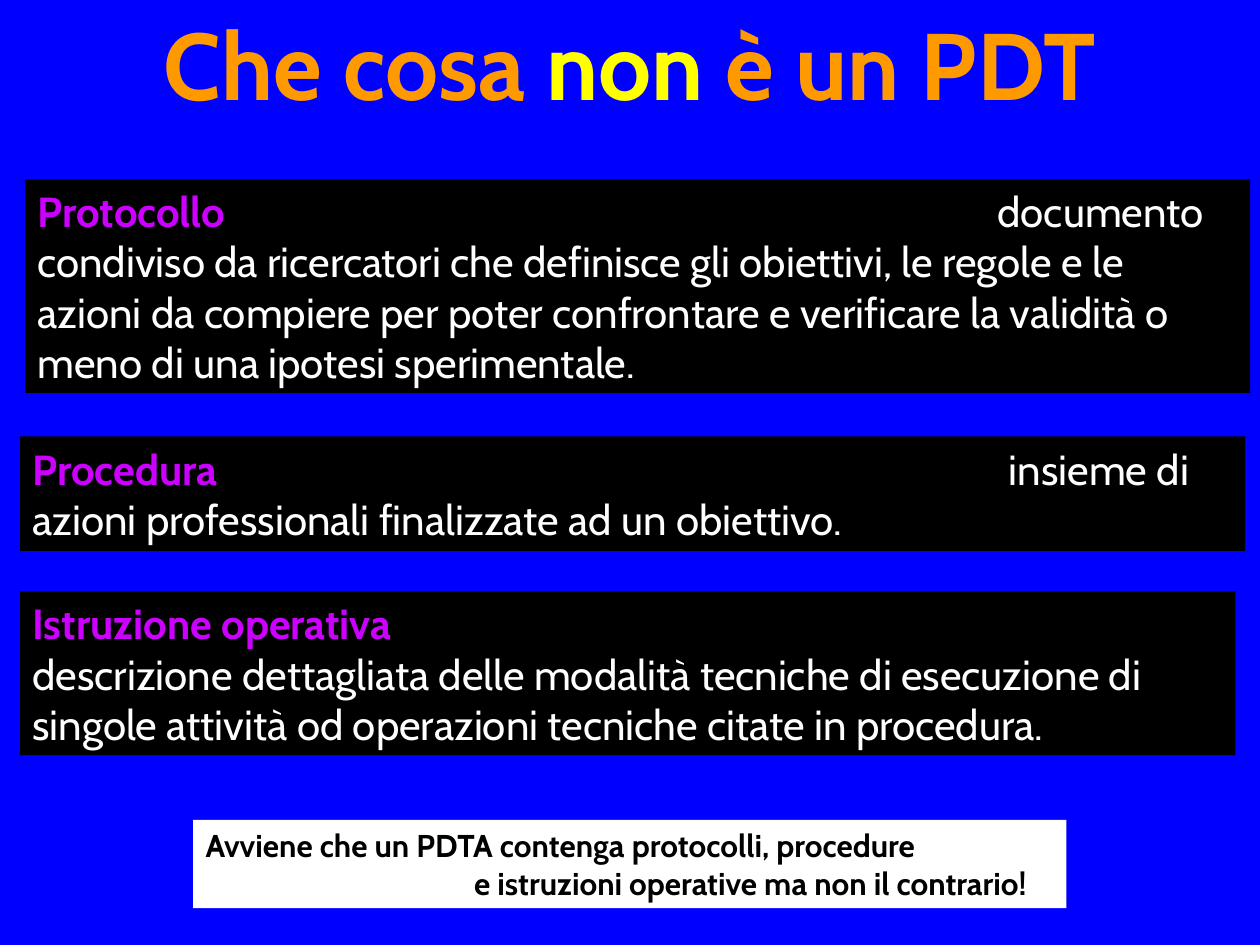
from dataclasses import dataclass
from typing import Optional

from lxml import etree
from pptx import Presentation
from pptx.dml.color import RGBColor
from pptx.enum.shapes import MSO_SHAPE
from pptx.enum.text import MSO_ANCHOR, MSO_AUTO_SIZE, PP_ALIGN
from pptx.oxml.ns import qn
from pptx.util import Pt

RECTANGLE = MSO_SHAPE.RECTANGLE
TOP, MIDDLE = MSO_ANCHOR.TOP, MSO_ANCHOR.MIDDLE
LEFT, CENTER = PP_ALIGN.LEFT, PP_ALIGN.CENTER
NO_AUTOFIT = MSO_AUTO_SIZE.NONE
FONT = "Cabin"
BLUE, BLACK, WHITE = "0000FF", "000000", "FFFFFF"
ORANGE, YELLOW, PURPLE = "FF9900", "FFFF00", "CC00FF"


@dataclass
class Definition:
    term: str
    meaning: str
    left: float
    top: float
    width: float
    height: float
    tab: Optional[float] = None


DEFINITIONS = [
    Definition(
        "Protocollo",
        "\tdocumento condiviso da ricercatori che definisce gli obiettivi, "
        "le regole e le azioni da compiere per poter confrontare e verificare "
        "la validità o meno di una ipotesi sperimentale.",
        14.4, 102.5, 700, 122, 548.6),
    Definition(
        "Procedura",
        "\tinsieme di azioni professionali finalizzate ad un obiettivo.",
        11.5, 249.3, 700, 65.5, 558),
    Definition(
        "Istruzione operativa",
        "\ndescrizione dettagliata delle modalità tecniche di esecuzione di "
        "singole attività od operazioni tecniche citate in procedura.",
        11.5, 338, 694.5, 93.5),
]


def color(value: str) -> RGBColor:
    return RGBColor.from_string(value)


def write(paragraph, text: str, *, size: float, ink: str, bold: bool = True) -> None:
    for number, line in enumerate(text.split("\n")):
        if number:
            paragraph.add_line_break()
        if line:
            run = paragraph.add_run()
            run.text = line
            run.font.name = FONT
            run.font.size = Pt(size)
            run.font.bold = bold
            run.font.color.rgb = color(ink)


def set_tab(paragraph, position: float) -> None:
    properties = paragraph._p.get_or_add_pPr()
    stops = etree.SubElement(properties, qn("a:tabLst"))
    etree.SubElement(stops, qn("a:tab"), pos=str(int(Pt(position))), algn="l")


def add_panel(slide, left: float, top: float, width: float, height: float,
              *, fill: str, anchor, tab: Optional[float] = None):
    panel = slide.shapes.add_shape(
        RECTANGLE, Pt(left), Pt(top), Pt(width), Pt(height))
    panel.shadow.inherit = False
    panel.fill.solid()
    panel.fill.fore_color.rgb = color(fill)
    panel.line.fill.background()
    panel.text_frame.word_wrap = True
    panel.text_frame.vertical_anchor = anchor
    paragraph = panel.text_frame.paragraphs[0]
    paragraph.alignment = LEFT
    if tab is not None:
        set_tab(paragraph, tab)
    return paragraph


def add_definition(slide, item: Definition) -> None:
    paragraph = add_panel(slide, item.left, item.top, item.width, item.height,
                          fill=BLACK, anchor=MIDDLE, tab=item.tab)
    write(paragraph, item.term, size=24, ink=PURPLE)
    write(paragraph, item.meaning, size=24, ink=WHITE, bold=False)


def add_title(slide) -> None:
    title = slide.shapes.title
    title.left, title.top, title.width, title.height = Pt(0), Pt(0), Pt(720), Pt(72)
    frame = title.text_frame
    frame.auto_size = NO_AUTOFIT
    frame.word_wrap = True
    frame.vertical_anchor = TOP
    heading = frame.paragraphs[0]
    heading.alignment = CENTER
    for text, ink in (("Che cosa ", ORANGE), ("non", YELLOW), (" è un PDT", ORANGE)):
        write(heading, text, size=54, ink=ink)


def main() -> None:
    presentation = Presentation()
    presentation.slide_width, presentation.slide_height = Pt(720), Pt(540)
    slide = presentation.slides.add_slide(presentation.slide_layouts[5])
    slide.background.fill.solid()
    slide.background.fill.fore_color.rgb = color(BLUE)
    add_title(slide)
    for item in DEFINITIONS:
        add_definition(slide, item)
    conclusion = add_panel(slide, 110.4, 468.6, 499, 50.4,
                           fill=WHITE, anchor=TOP, tab=153.4)
    write(conclusion,
          "Avviene che un PDTA contenga protocolli, procedure\n"
          "\te istruzioni operative ma non il contrario!",
          size=18, ink=BLACK)
    presentation.save("out.pptx")


if __name__ == "__main__":
    main()
